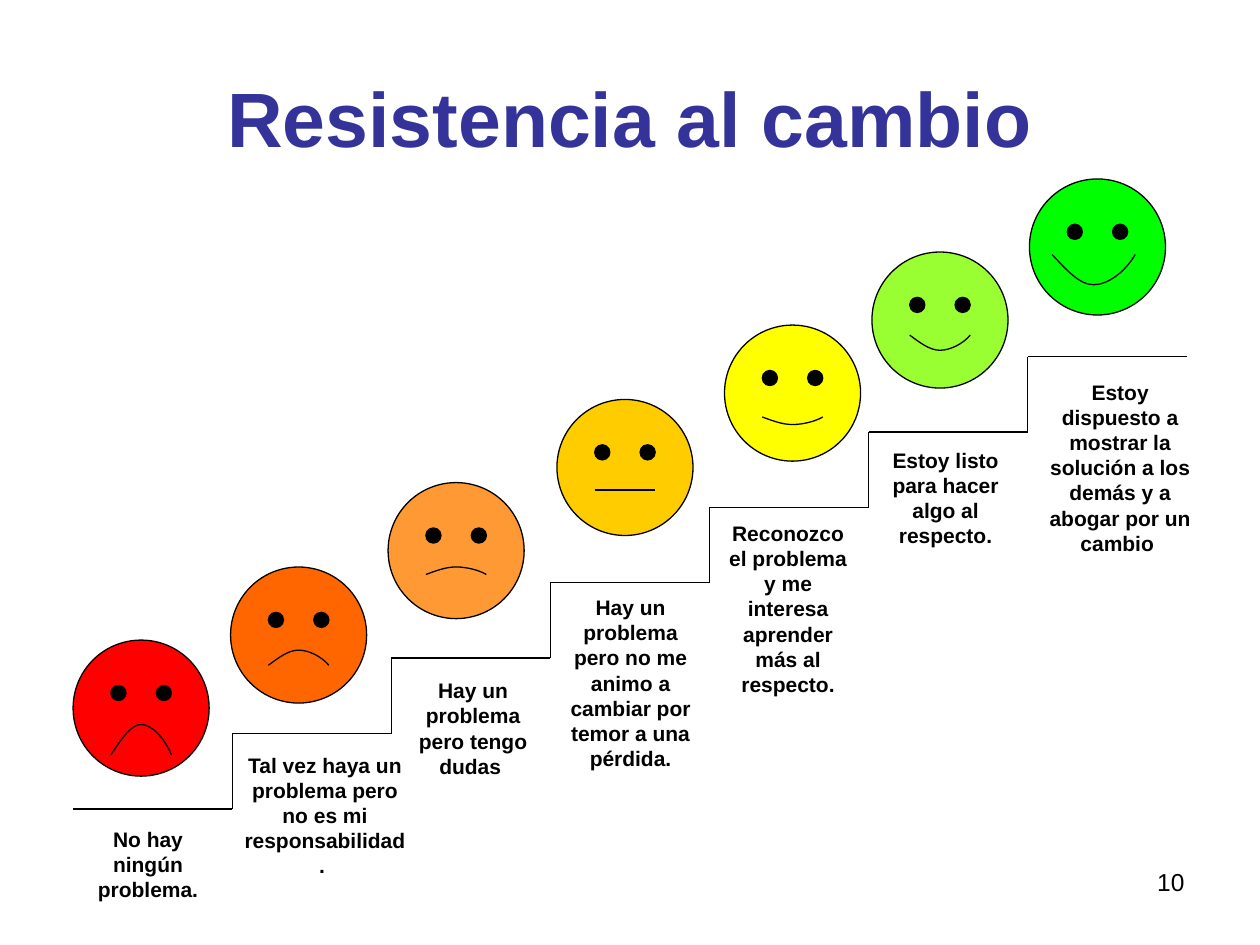
"""Build the slide on resistance to change: seven faces climbing a staircase."""
from pptx import Presentation
from pptx.dml.color import RGBColor
from pptx.enum.shapes import MSO_CONNECTOR as Conn, MSO_SHAPE as Kind
from pptx.enum.text import MSO_ANCHOR as Anchor, MSO_AUTO_SIZE as Fit, PP_ALIGN as Align
from pptx.oxml.ns import qn
from pptx.util import Inches, Pt
from lxml.etree import SubElement

FACES = [
    (0.58, 5.08, "FF0000", (0.3, 0.91, 0.48, -0.24)),
    (3.08, 3.83, "FF9933", (0.3, 0.73, 0.48, -0.06)),
    (1.83, 4.5, "FF6600", (0.3, 0.78, 0.48, -0.12)),
    (5.75, 2.58, "FFFF00", (0.3, 0.73, 0.48, 0.06)),
    (6.92, 2, "99FF33", (0.3, 0.66, 0.48, 0.12)),
    (8.17, 1.42, "00FF00", (0.18, 0.6, 0.66, 0.24)),
    (4.42, 3.17, "FFCC00", (0.3, 0.72, 0.48, 0)),
]
LABELS = [
    ("No hay ningún problema.", 0.59, 6.51, 1.17, 0.5),
    ("Tal vez haya un problema pero no es mi responsabilidad. ", 1.83, 5.92, 1.5, 0.9),
    ("Estoy dispuesto a mostrar la solución a los demás y a abogar por un cambio ",
     8.23, 2.96, 1.32, 1.3),
    ("Estoy listo para hacer algo al respecto.", 6.92, 3.5, 1.17, 0.7),
    ("Reconozco el problema y me interesa aprender más al respecto.",
     5.67, 4.08, 1.17, 1.5),
    ("Hay un problema pero no me animo a cambiar por temor a una pérdida.",
     4.42, 4.67, 1.17, 1.5),
    ("Hay un problema pero tengo dudas ", 3.17, 5.33, 1.17, 0.9),
]
MOUTH = [(0, 0), (0.17, 0.5), (0.33, 1), (0.5, 1), (0.67, 1), (0.88, 0.58), (1, 0)]


def color(code):
    """Turn a hex string into a colour."""
    return RGBColor.from_string(code)


class Deck:
    """Hold the style and the current slide."""

    font, ink, head, thin = "Arial", "000000", "333399", 0.75

    def __init__(self):
        """Open a slide that has only a title."""
        self.prs = Presentation()
        self.prs.slide_width, self.prs.slide_height = Inches(10), Inches(7.5)
        self.slide = self.prs.slides.add_slide(self.prs.slide_layouts[5])

    def style(self, frame, size, bold, align, code):
        """Format every run of a text frame."""
        frame.word_wrap = True
        for para in frame.paragraphs:
            para.alignment = align
            for run in para.runs:
                run.font.name, run.font.size, run.font.bold = self.font, Pt(size), bold
                run.font.color.rgb = color(code)

    def title(self, text, *box):
        """Fill and place the title."""
        shape = self.slide.shapes.title
        shape.left, shape.top, shape.width, shape.height = map(Inches, box)
        shape.text_frame.text = text
        shape.text_frame.vertical_anchor = Anchor.MIDDLE
        self.style(shape.text_frame, 44, True, Align.CENTER, self.head)

    def text(self, text, *box, size=12, bold=True, align=Align.CENTER, fit=Fit.SHAPE_TO_FIT_TEXT):
        """Add a text box."""
        frame = self.slide.shapes.add_textbox(*map(Inches, box)).text_frame
        frame.text = text
        frame.auto_size = fit
        self.style(frame, size, bold, align, self.ink)

    def edge(self, shape):
        """Give a shape the thin outline."""
        shape.line.color.rgb = color(self.ink)
        shape.line.width = Pt(self.thin)

    def disc(self, group, x, y, size, code):
        """Add a filled circle."""
        shape = group.shapes.add_shape(Kind.OVAL, *map(Inches, (x, y, size, size)))
        shape.shadow.inherit = False
        shape.fill.solid()
        shape.fill.fore_color.rgb = color(code)
        self.edge(shape)

    def line(self, group, *ends):
        """Add a straight line."""
        link = group.shapes.add_connector(Conn.STRAIGHT, *map(Inches, ends))
        self.edge(link)
        SubElement(link._element.spPr, qn("a:effectLst"))

    def curve(self, group, x, y, wide, high):
        """Add a mouth made of two cubic curves."""
        spots = [(Inches(x + wide * u), Inches(y + high * v)) for u, v in MOUTH]
        pen = group.shapes.build_freeform(*spots[0])
        pen.add_line_segments(spots[1:], close=False)
        shape = pen.convert_to_shape()
        route = next(shape._element.iter(qn("a:path")))
        legs = route.findall(qn("a:lnTo"))
        for start in (0, 3):
            cubic = SubElement(route, qn("a:cubicBezTo"))
            for leg in legs[start:start + 3]:
                cubic.append(leg[0])
                route.remove(leg)
        shape.shadow.inherit = False
        shape.fill.background()
        self.edge(shape)

    def face(self, x, y, code, mouth):
        """Add a face with a mouth and two eyes."""
        group = self.slide.shapes.add_group_shape()
        self.disc(group, x, y, 1.08, code)
        left, top, wide, high = mouth
        if high:
            self.curve(group, x + left, y + top, wide, high)
        else:
            self.line(group, x + left, y + top, x + left + wide, y + top)
        for gap in (0.3, 0.66):
            self.disc(group, x + gap, y + 0.36, 0.12, self.ink)

    def stairs(self, x, y, run, rise, count):
        """Add a staircase of treads and risers."""
        group = self.slide.shapes.add_group_shape()
        for n in range(count):
            left, right, level = x + n * run, x + (n + 1) * run, y - n * rise
            self.line(group, left, level, right, level)
            if n < count - 1:
                self.line(group, right, level, right, level - rise)


def main():
    """Build and save the slide."""
    deck = Deck()
    deck.text("10", 7.17, 6.83, 2.33, 0.52, size=14, bold=False, align=Align.RIGHT, fit=Fit.NONE)
    deck.title("Resistencia al cambio", 0.5, 0.3, 9, 1.25)
    for face in FACES:
        deck.face(*face)
    deck.stairs(0.58, 6.42, 8.84 / 7, 3.59 / 6, 7)
    for label in LABELS:
        deck.text(*label)
    deck.prs.save("out.pptx")


if __name__ == "__main__":
    main()
